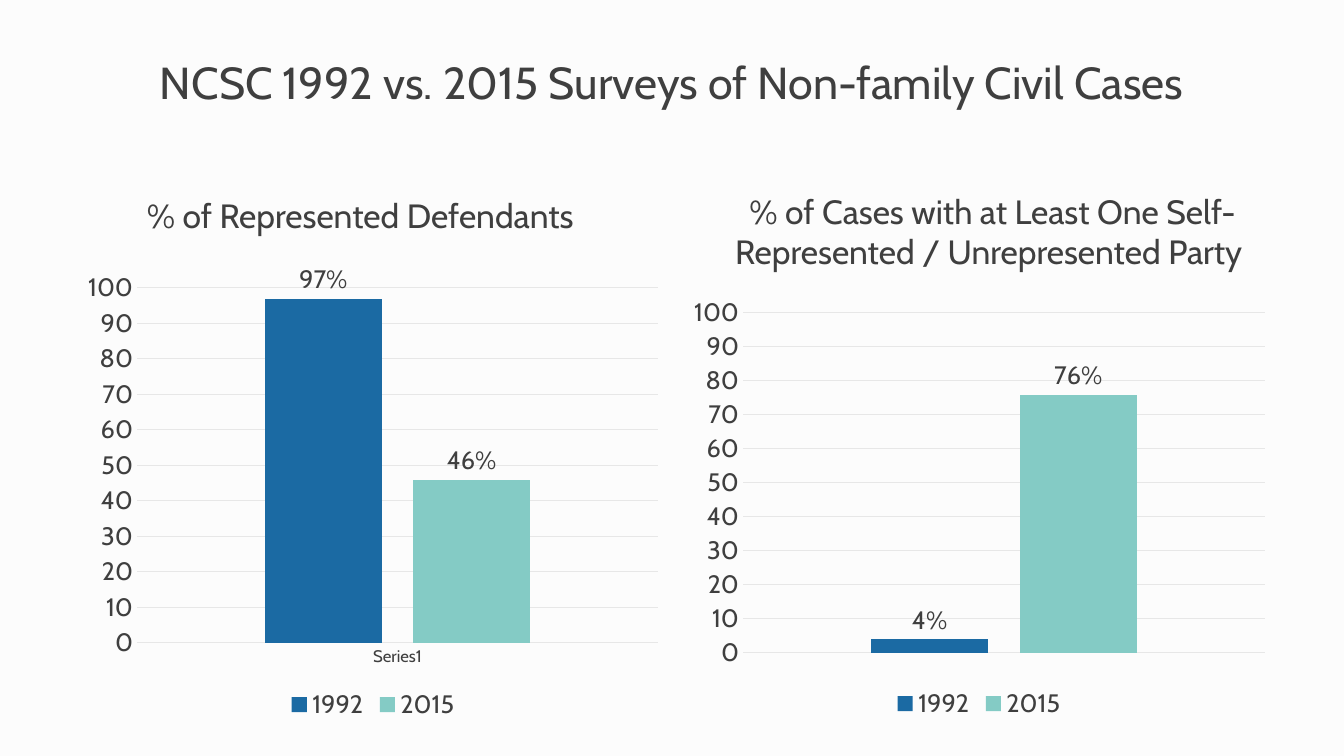
from pptx import Presentation, util as u
from pptx.chart.data import CategoryChartData
from pptx.dml.color import RGBColor
from pptx.enum import chart as ch, text
from pptx.oxml import parse_xml
from pptx.oxml.ns import nsdecls, qn

PX = u.Inches(1) / 100.8
INK, GRID = "3F3F3F", "E7E7E7"
SERIES = {"1992": "1B6AA3", "2015": "84CBC5"}


def px(*values):
    return [round(v * PX) for v in values]


def style(font, size):
    for key, value in {"name": "Cabin", "size": u.Pt(size), "bold": False}.items():
        setattr(font, key, value)
    font.color.rgb = RGBColor.from_string(INK)


prs = Presentation()
prs.slide_width, prs.slide_height = px(1344, 756)
s = prs.slides.add_slide(prs.slide_layouts[6])
s.background.fill.solid()
s.background.fill.fore_color.rgb = RGBColor.from_string("FCFCFC")

headings = [
    ("NCSC 1992 vs. 2015 Surveys of Non-family Civil Cases", 32, "MIDDLE", (67, 19, 1210, 126)),
    ("% of Represented Defendants ", 24, "BOTTOM", (67, 169, 594, 71)),
    ("% of Cases with at Least One Self-Represented / Unrepresented Party ", 24, "BOTTOM", (661, 205, 663, 71)),
]
for words, size, anchor, box in headings:
    tf = s.shapes.add_textbox(*px(*box)).text_frame
    tf.word_wrap = True
    tf.vertical_anchor = text.MSO_ANCHOR[anchor]
    p = tf.paragraphs[0]
    p.alignment = text.PP_ALIGN.CENTER
    r = p.add_run()
    r.text = words
    style(r.font, size)

charts = [
    ("Series1", (97, 46), True, (76, 264, 594, 461), (137, 288, 521, 355)),
    ("1", (4, 76), False, (682, 289, 594, 435), (743, 313, 522, 340)),
]
for category, values, show_category, box, plot_box in charts:
    data = CategoryChartData(number_format="General")
    data.categories = [category]
    for name, value in zip(SERIES, values):
        data.add_series(name, [value])
    chart = s.shapes.add_chart(ch.XL_CHART_TYPE.COLUMN_CLUSTERED, *px(*box), data).chart
    style(chart.font, 10)
    chart.has_title = False
    chart.has_legend = True
    chart.legend.position = ch.XL_LEGEND_POSITION.BOTTOM
    chart.legend.include_in_layout = False
    style(chart.legend.font, 18)

    cat, val = chart.category_axis, chart.value_axis
    for axis, size in ((cat, 12), (val, 18)):
        axis.major_tick_mark = axis.minor_tick_mark = ch.XL_TICK_MARK.NONE
        style(axis.tick_labels.font, size)
    cat.visible = show_category
    for key, value in {"minimum_scale": 0, "maximum_scale": 100, "major_unit": 10}.items():
        setattr(val, key, value)
    val.format.line.fill.background()
    for line in (cat.format.line, val.major_gridlines.format.line):
        line.color.rgb = RGBColor.from_string(GRID)
        line.width = u.Pt(0.75)

    plot = chart.plots[0]
    for key, value in {"gap_width": 219, "overlap": -27, "vary_by_categories": False}.items():
        setattr(plot, key, value)
    for series, color in zip(plot.series, SERIES.values()):
        series.format.fill.solid()
        series.format.fill.fore_color.rgb = RGBColor.from_string(color)
        labels = series.data_labels
        for key, value in {"show_value": True, "number_format": '0"%"', "number_format_is_linked": False,
                           "position": ch.XL_LABEL_POSITION.OUTSIDE_END}.items():
            setattr(labels, key, value)
        style(labels.font, 18)

    left, top, width, height = box
    x, y, w, h = plot_box
    fractions = {"x": (x - left) / width, "y": (y - top) / height, "w": w / width, "h": h / height}
    parts = "".join(f'<c:{key}Mode val="edge"/>' for key in "xy")
    parts += "".join(f'<c:{key} val="{value:.4f}"/>' for key, value in fractions.items())
    area = chart.element.find(qn("c:chart")).find(qn("c:plotArea"))
    for layout in area.findall(qn("c:layout")):
        area.remove(layout)
    area.insert(0, parse_xml(f'<c:layout {nsdecls("c")}><c:manualLayout>'
                             f'<c:layoutTarget val="inner"/>{parts}</c:manualLayout></c:layout>'))

prs.save("out.pptx")
